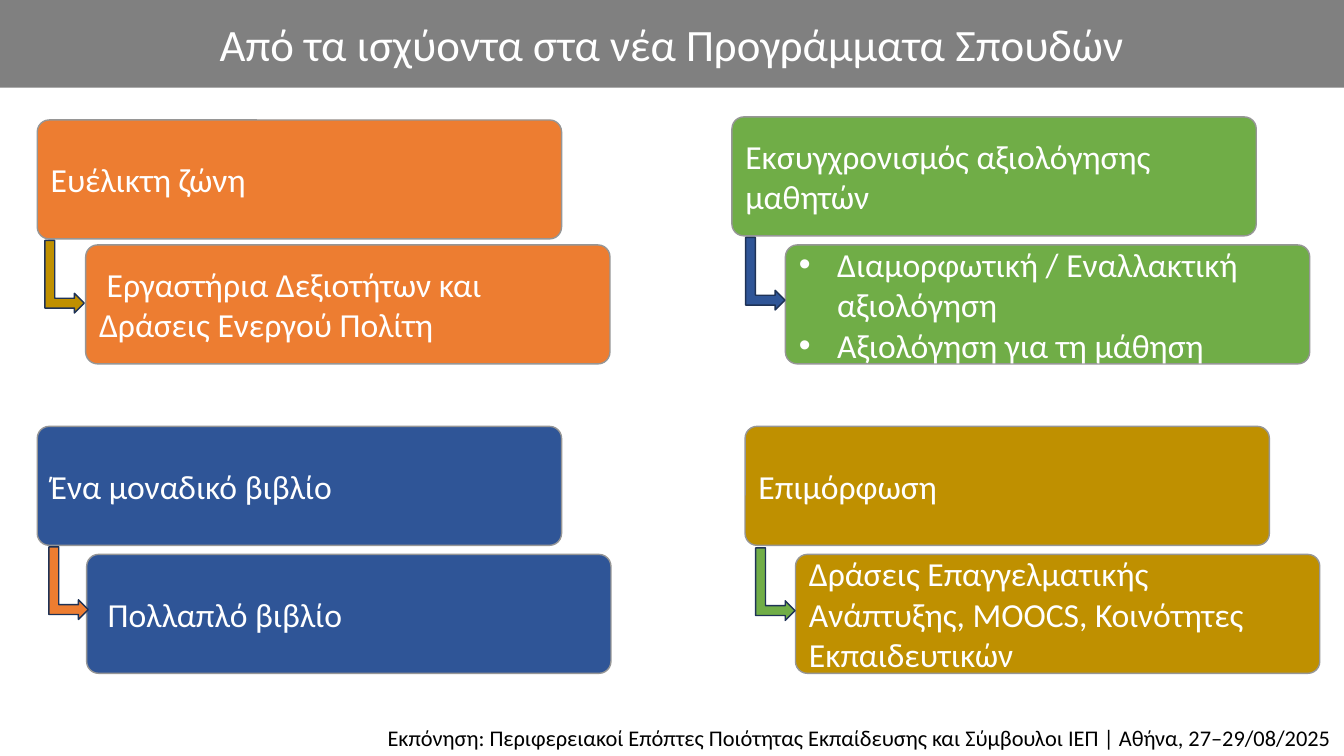
from pptx import Presentation
from pptx.dml.color import RGBColor
from pptx.enum.shapes import MSO_SHAPE
from pptx.enum.text import MSO_ANCHOR, PP_ALIGN
from pptx.util import Inches, Pt
from lxml import etree

# Content
TITLE = "Από τα ισχύοντα στα νέα Προγράμματα Σπουδών"
FOOTER = ("Εκπόνηση: Περιφερειακοί Επόπτες Ποιότητας Εκπαίδευσης και "
          "Σύμβουλοι ΙΕΠ | Αθήνα, 27–29/08/2025")
# Each change: colours, then (left, top) of the current box, new box and arrow
CHANGES = [
    dict(fill="orange", arrow_fill="gold", now="Ευέλικτη ζώνη",
         new=[" Εργαστήρια Δεξιοτήτων και Δράσεις Ενεργού Πολίτη"],
         now_at=(0.37, 1.19), new_at=(0.85, 2.43), arrow_at=(0.28, 2.55)),
    dict(fill="green", arrow_fill="blue", now="Εκσυγχρονισμός αξιολόγησης μαθητών",
         new=["Διαμορφωτική / Εναλλακτική αξιολόγηση", "Αξιολόγηση για τη μάθηση"],
         now_at=(7.26, 1.16), new_at=(7.79, 2.43), arrow_at=(7.23, 2.52)),
    dict(fill="blue", arrow_fill="orange", now="Ένα μοναδικό βιβλίο",
         new=[" Πολλαπλό βιβλίο"],
         now_at=(0.37, 4.23), new_at=(0.86, 5.5), arrow_at=(0.32, 5.59)),
    dict(fill="gold", arrow_fill="green", now="Επιμόρφωση",
         new=["Δράσεις Επαγγελματικής Ανάπτυξης, MOOCS, Κοινότητες Εκπαιδευτικών"],
         now_at=(7.39, 4.23), new_at=(7.89, 5.5), arrow_at=(7.33, 5.6)),
]
COLORS = dict(orange="ED7D31", green="70AD47", blue="2F5597", gold="BF9000",
              gray="808080", white="FFFFFF", black="000000",
              box_line="969696", arrow_line="1E3256")
BOX, ARROW = (5.2, 1.18), (0.72, 0.39)
BULLET_INDENT = Inches(0.38)


def rgb(name):
    return RGBColor.from_string(COLORS[name])


def add_shape(kind, at, size, fill, line=None):
    sp = slide.shapes.add_shape(kind, *map(Inches, at + size))
    sp.shadow.inherit = False
    sp.fill.solid()
    sp.fill.fore_color.rgb = rgb(fill)
    if line:
        sp.line.color.rgb = rgb(line)
        sp.line.width = Pt(1)
    else:
        sp.line.fill.background()
    return sp


def add_bullet(p):
    pPr = p._p.get_or_add_pPr()
    pPr.set("marL", str(BULLET_INDENT))
    pPr.set("indent", str(-BULLET_INDENT))
    ns = pPr.nsmap["a"]
    etree.SubElement(pPr, f"{{{ns}}}buFont").set("typeface", "Arial")
    etree.SubElement(pPr, f"{{{ns}}}buChar").set("char", "•")


def write(sp, lines, size=24, color="white", align=PP_ALIGN.LEFT,
          anchor=MSO_ANCHOR.MIDDLE, spacing=None):
    tf = sp.text_frame
    tf.word_wrap = True
    tf.vertical_anchor = anchor
    for i, line in enumerate(lines):
        p = tf.paragraphs[0] if i == 0 else tf.add_paragraph()
        for name, value in dict(alignment=align, line_spacing=spacing).items():
            setattr(p, name, value)
        if len(lines) > 1:
            add_bullet(p)
        r = p.add_run()
        r.text = line
        for name, value in dict(name="Calibri", size=Pt(size)).items():
            setattr(r.font, name, value)
        r.font.color.rgb = rgb(color)


prs = Presentation()
prs.slide_width, prs.slide_height = Inches(13.33), Inches(7.5)
slide = prs.slides.add_slide(prs.slide_layouts[6])

# Pairs of boxes: current practice, then what replaces it
for change in CHANGES:
    for at, lines in ((change["now_at"], [change["now"]]),
                      (change["new_at"], change["new"])):
        sp = add_shape(MSO_SHAPE.ROUNDED_RECTANGLE, at, BOX, change["fill"], "box_line")
        sp.adjustments[0] = 0.1
        write(sp, lines)

# Bent arrows
for change in CHANGES:
    sp = add_shape(MSO_SHAPE.BENT_UP_ARROW, change["arrow_at"], ARROW,
                   change["arrow_fill"], "arrow_line")
    sp.rotation = 90

# Title band and footer
write(add_shape(MSO_SHAPE.RECTANGLE, (0, 0), (13.33, 0.87), "gray"),
      [TITLE], size=32, align=PP_ALIGN.CENTER)
write(add_shape(MSO_SHAPE.RECTANGLE, (0.03, 7.11), (13.27, 0.39), "white"),
      [FOOTER], size=16, color="black", align=PP_ALIGN.RIGHT,
      anchor=MSO_ANCHOR.TOP, spacing=1.1)

prs.save("out.pptx")
